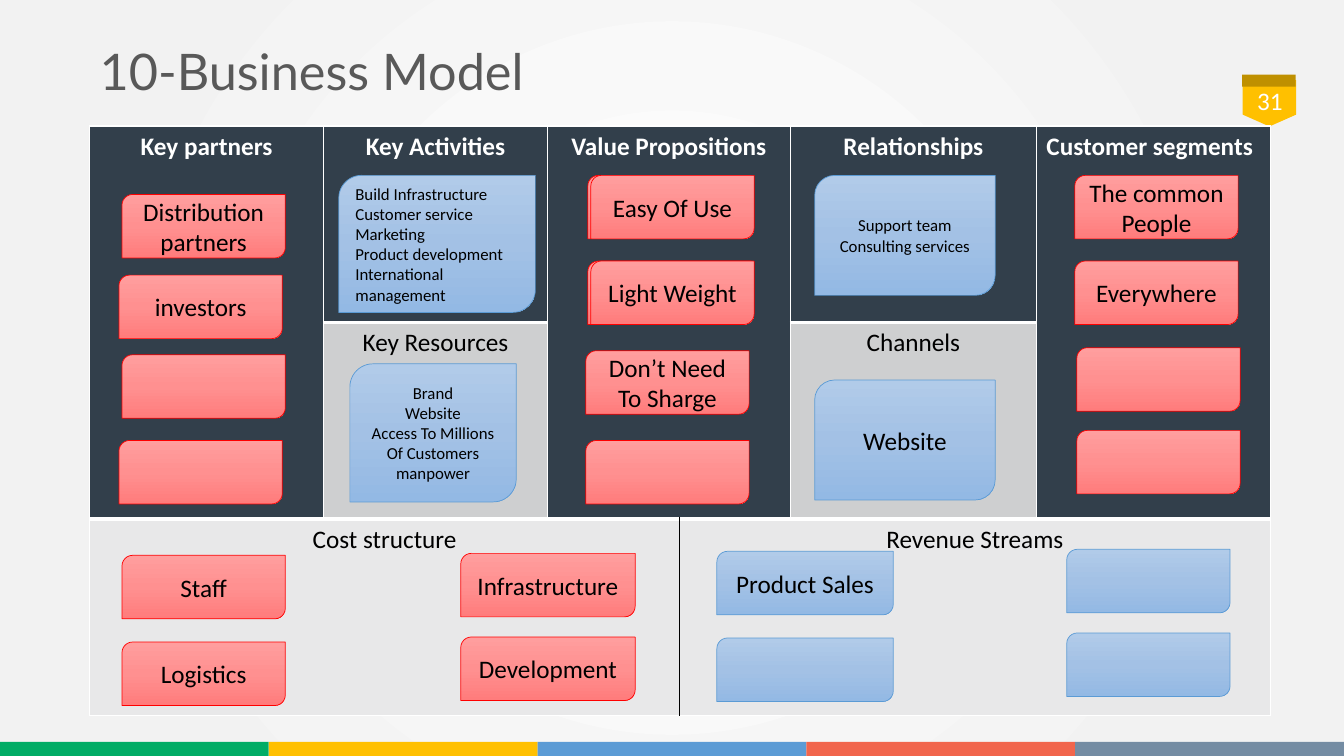
from lxml import etree
from pptx import Presentation
from pptx.dml.color import RGBColor
from pptx.enum.shapes import MSO_SHAPE
from pptx.enum.text import MSO_ANCHOR, PP_ALIGN
from pptx.oxml import parse_xml
from pptx.oxml.ns import qn
from pptx.util import Inches, Pt

RECT, PENTAGON = MSO_SHAPE.RECTANGLE, MSO_SHAPE.PENTAGON
NOTE = MSO_SHAPE.ROUND_2_DIAG_RECTANGLE
LEFT, CENTER, MIDDLE = PP_ALIGN.LEFT, PP_ALIGN.CENTER, MSO_ANCHOR.MIDDLE
NS = "http://schemas.openxmlformats.org/drawingml/2006/main"

WHITE, BLACK = RGBColor(255, 255, 255), RGBColor(0, 0, 0)
TITLE_GREY = RGBColor(0x59, 0x59, 0x59)
NAVY = RGBColor(0x32, 0x3F, 0x4B)
SILVER = RGBColor(0xCE, 0xCF, 0xD0)
PALE = RGBColor(0xE8, 0xE8, 0xE9)
GREEN = RGBColor(0x00, 0xAC, 0x65)
AMBER = RGBColor(0xFF, 0xC0, 0x00)
DARK_AMBER = RGBColor(0xBF, 0x90, 0x00)
BLUE = RGBColor(0x5B, 0x9B, 0xD5)
CORAL = RGBColor(0xF1, 0x65, 0x4C)
SLATE = RGBColor(0x74, 0x8C, 0xA3)
RED = RGBColor(0xFF, 0x00, 0x00)

RED_STOPS = [(0, "FF9E9E"), (50, "FF9090"), (100, "FF7C7C")]
BLUE_STOPS = [(0, "B1CBE9"), (50, "A3C1E5"), (100, "93B9E4")]
PAGE_STOPS = [(0, "FFFFFF"), (81, "F2F2F2"), (100, "F2F2F2")]
DOWNWARD = '<a:lin ang="5400000" scaled="0"/>'
CIRCLE = ('<a:path path="circle"><a:fillToRect l="50000" t="50000" '
          'r="50000" b="50000"/></a:path>')

FOOTER = [GREEN, AMBER, BLUE, CORAL, SLATE]

COLUMNS = [2.32, 2.22, 1.31, 1.1, 2.44, 2.32]
ROW_HEIGHT = 1.95
CELLS = [
    (0, 0, 2, 1, "Key partners"),
    (0, 1, 1, 1, "Key Activities"),
    (0, 2, 2, 2, "Value Propositions"),
    (0, 4, 1, 1, "Relationships"),
    (0, 5, 2, 1, "Customer segments"),
    (1, 1, 1, 1, "Key Resources"),
    (1, 4, 1, 1, "Channels"),
    (2, 0, 1, 3, "Cost structure"),
    (2, 3, 1, 3, "Revenue Streams"),
]
ROW_FILLS = [NAVY, SILVER, PALE]

NOTE_H = 0.63
RED_NOTES = [
    (1.21, 1.93, 1.62, "Distribution partners"),
    (1.18, 2.73, 1.62, "investors"),
    (1.21, 3.52, 1.62, ""),
    (1.18, 4.37, 1.62, ""),
    (5.83, 1.74, 1.62, ""),
    (5.83, 2.59, 1.62, ""),
    (5.86, 1.74, 1.62, "Easy Of Use"),
    (5.86, 2.59, 1.62, "Light Weight"),
    (5.81, 3.48, 1.62, "Don’t Need To Sharge"),
    (5.81, 4.37, 1.62, ""),
    (10.66, 1.74, 1.62, "The common People"),
    (10.66, 2.59, 1.62, "Everywhere"),
    (10.68, 3.45, 1.62, ""),
    (10.68, 4.27, 1.62, ""),
    (1.21, 5.51, 1.62, "Staff"),
    (1.21, 6.37, 1.62, "Logistics"),
    (4.57, 5.49, 1.73, "Infrastructure"),
    (4.57, 6.32, 1.73, "Development"),
]
BLUE_NOTES = [
    (3.36, 1.74, 1.95, 1.36, 12, LEFT,
     ["Build Infrastructure", "Customer service", "Marketing",
      "Product development", "International management"]),
    (3.47, 3.61, 1.65, 1.37, 12, CENTER,
     ["Brand", "Website", "Access To Millions Of Customers", "manpower"]),
    (8.08, 1.74, 1.79, 1.19, 12, CENTER, ["Support team", "Consulting services"]),
    (8.08, 3.77, 1.79, 1.19, 18, CENTER, ["Website"]),
    (7.11, 5.47, 1.75, NOTE_H, 18, CENTER, ["Product Sales"]),
    (7.11, 6.33, 1.75, NOTE_H, 18, CENTER, []),
    (10.58, 5.45, 1.62, NOTE_H, 18, CENTER, []),
    (10.58, 6.28, 1.62, NOTE_H, 18, CENTER, []),
]


def gradient(stops, direction):
    gs = "".join(f'<a:gs pos="{pos * 1000}"><a:srgbClr val="{color}"/></a:gs>'
                 for pos, color in stops)
    return parse_xml(f'<a:gradFill xmlns:a="{NS}" rotWithShape="1">'
                     f'<a:gsLst>{gs}</a:gsLst>{direction}</a:gradFill>')


def set_gradient(fill, parent, stops, direction):
    fill.gradient()
    parent.replace(parent.find(qn("a:gradFill")), gradient(stops, direction))


def write(tf, lines, size, color, align=CENTER, font="Calibri", bold=False):
    for i, line in enumerate(lines):
        p = tf.paragraphs[0] if i == 0 else tf.add_paragraph()
        p.alignment = align
        r = p.add_run()
        r.text = line
        r.font.name, r.font.size, r.font.bold = font, Pt(size), bold
        r.font.color.rgb = color


def add_shape(s, kind, x, y, w, h, color=None):
    sp = s.shapes.add_shape(kind, Inches(x), Inches(y), Inches(w), Inches(h))
    sp.shadow.inherit = False
    if color is not None:
        sp.fill.solid()
        sp.fill.fore_color.rgb = color
        sp.line.fill.background()
    return sp


def add_note(s, x, y, w, h, stops, edge, size, align, lines):
    sp = add_shape(s, NOTE, x, y, w, h)
    set_gradient(sp.fill, sp.element.spPr, stops, DOWNWARD)
    sp.line.color.rgb = edge
    sp.line.width = Pt(0.5)
    sp.text_frame.word_wrap = True
    sp.text_frame.vertical_anchor = MIDDLE
    write(sp.text_frame, lines, size, BLACK, align)


def add_label(s, x, y, w, h, text, size, color, align, font):
    tf = s.shapes.add_textbox(Inches(x), Inches(y), Inches(w), Inches(h)).text_frame
    tf.word_wrap = True
    tf.vertical_anchor = MIDDLE
    write(tf, [text], size, color, align, font)
    return tf


def set_borders(cell, borders):
    tcPr = cell._tc.get_or_add_tcPr()
    for i, (side, color, width) in enumerate(borders):
        ln = etree.Element(qn(f"a:ln{side}"), w=str(Pt(width)))
        fill = etree.SubElement(ln, qn("a:solidFill"))
        etree.SubElement(fill, qn("a:srgbClr"), val=str(color))
        tcPr.insert(i, ln)


def add_canvas(s):
    frame = s.shapes.add_table(3, len(COLUMNS), Inches(0.89), Inches(1.25),
                               Inches(sum(COLUMNS)), Inches(3 * ROW_HEIGHT))
    table = frame.table
    for column, width in zip(table.columns, COLUMNS):
        column.width = Inches(width)
    for row in table.rows:
        row.height = Inches(ROW_HEIGHT)
    for row, col, down, across, text in CELLS:
        cell = table.cell(row, col)
        if down * across > 1:
            cell.merge(table.cell(row + down - 1, col + across - 1))
        cell.fill.solid()
        cell.fill.fore_color.rgb = ROW_FILLS[row]
        head = row == 0
        align = LEFT if text == "Customer segments" else CENTER
        write(cell.text_frame, [text], 18, WHITE if head else BLACK, align, bold=head)
        set_borders(cell, [
            ("L", BLACK if (row, col) == (2, 3) else WHITE, 1),
            ("R", BLACK if (row, col) == (2, 0) else WHITE, 1),
            ("T", WHITE, 1),
            ("B", WHITE, 3 if head else 1)])


def main():
    prs = Presentation()
    prs.slide_width, prs.slide_height = Inches(13.33), Inches(7.5)
    s = prs.slides.add_slide(prs.slide_layouts[6])
    fill = s.background.fill
    set_gradient(fill, s.element.cSld.find(qn("p:bg")).find(qn("p:bgPr")),
                 PAGE_STOPS, CIRCLE)

    badge = add_shape(s, PENTAGON, 12.36, 0.76, 0.46, 0.53, AMBER)
    badge.rotation = 90
    badge.adjustments[0] = 0.255
    add_shape(s, RECT, 12.32, 0.74, 0.53, 0.12, DARK_AMBER)
    band = 13.33 / len(FOOTER)
    for i, color in enumerate(FOOTER):
        add_shape(s, RECT, i * band, 7.36, band, 0.14, color)

    title = add_label(s, 0.89, 0.34, 11.7, 0.8, "10-Business Model", 36,
                      TITLE_GREY, LEFT, "Lato")
    title.paragraphs[0].line_spacing = 0.9
    add_label(s, 12.29, 0.74, 0.61, 0.52, "31", 18, WHITE, CENTER, "Calibri")

    add_canvas(s)
    for x, y, w, text in RED_NOTES:
        add_note(s, x, y, w, NOTE_H, RED_STOPS, RED, 18, CENTER, [text] if text else [])
    for x, y, w, h, size, align, lines in BLUE_NOTES:
        add_note(s, x, y, w, h, BLUE_STOPS, BLUE, size, align, lines)
    prs.save("out.pptx")


if __name__ == "__main__":
    main()
